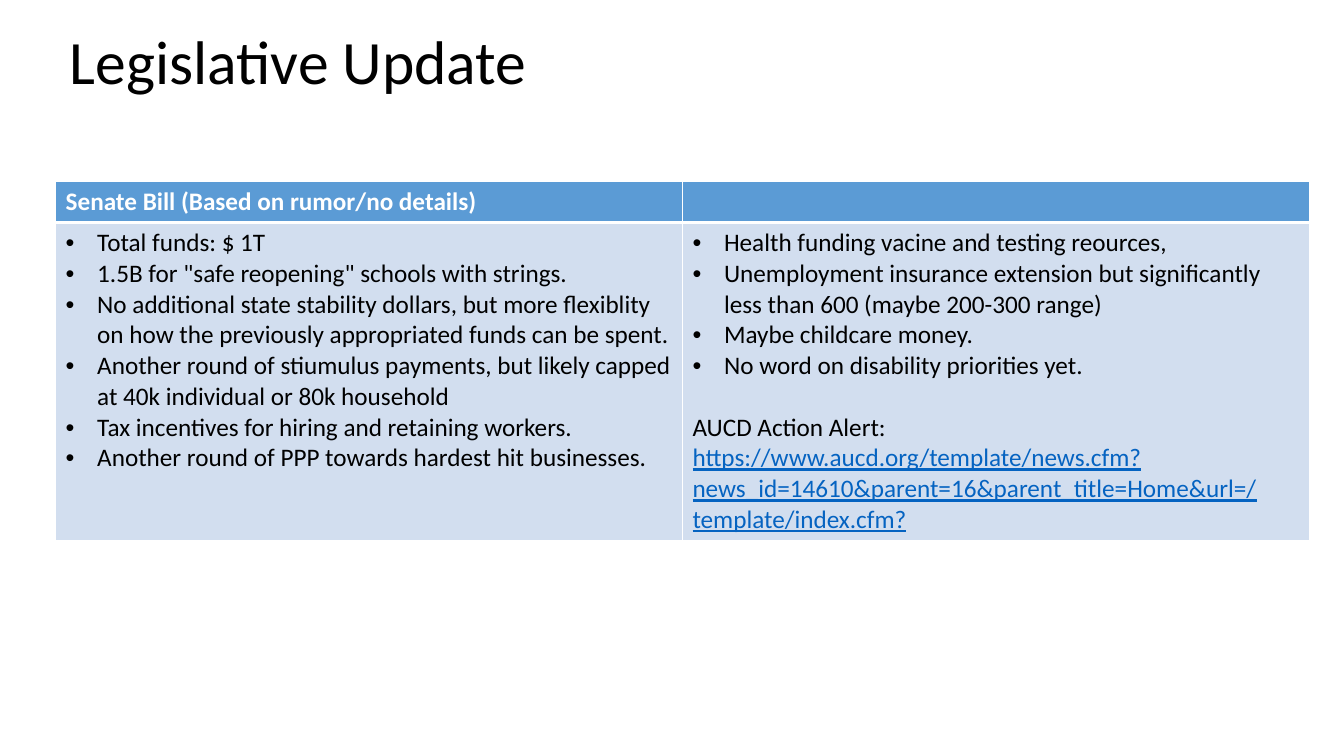
from dataclasses import dataclass

from pptx import Presentation, util as u
from pptx.dml.color import RGBColor
from pptx.enum import text
from pptx.oxml import parse_xml
from pptx.oxml.ns import nsdecls

PX = 9525
FONT = "Calibri"
BLACK = RGBColor(0, 0, 0)
WHITE = RGBColor(0xFF, 0xFF, 0xFF)
BLUE = RGBColor(0x5B, 0x9B, 0xD5)
PALE = RGBColor(0xD2, 0xDE, 0xEF)
LINK = RGBColor(0x05, 0x63, 0xC1)

COL_W = 597
HEAD_H, BODY_H = 39, 298
INDENT = 30


@dataclass
class Column:
    head: str
    points: list[str]
    alert: str = ""
    url: str = ""


COLUMNS = [
    Column("Senate Bill (Based on rumor/no details)", [
        "Total funds: $ 1T",
        '1.5B for "safe reopening" schools with strings.',
        "No additional state stability dollars, but more flexiblity on how "
        "the previously appropriated funds can be spent.",
        "Another round of stiumulus payments, but likely "
        "capped at 40k individual or 80k household",
        "Tax incentives for hiring and retaining workers.",
        "Another round of PPP towards hardest hit businesses.",
    ]),
    Column("", [
        "Health funding vacine and testing reources,",
        "Unemployment insurance extension but significantly less than 600 "
        "(maybe 200-300 range)",
        "Maybe childcare money.",
        "No word on disability priorities yet.",
    ], "AUCD Action Alert:",
        "https://www.aucd.org/template/news.cfm?news_id=14610&parent=16"
        "&parent_title=Home&url=/template/index.cfm?"),
]


def px(n: int) -> u.Emu:
    return u.Emu(n * PX)


def add_run(para, words: str, size: int = 18, color: RGBColor = BLACK,
            bold: bool = False, under: bool = False) -> None:
    run = para.add_run()
    run.text = words
    font = run.font
    font.name, font.size, font.bold = FONT, u.Pt(size), bold
    font.color.rgb = color
    if under:
        font.underline = True


def add_bullet(para) -> None:
    props = para._p.get_or_add_pPr()
    props.set("marL", str(px(INDENT)))
    props.set("indent", str(px(-INDENT)))
    props.append(parse_xml(f'<a:buFont {nsdecls("a")} typeface="Arial"/>'))
    props.append(parse_xml(f'<a:buChar {nsdecls("a")} char="•"/>'))


def style_cell(cell, fill: RGBColor, top: int, base: int) -> None:
    """Fill the cell and give it white borders, with top and base in points."""
    cell.fill.solid()
    cell.fill.fore_color.rgb = fill
    edges = {"L": 1, "R": 1, "T": top, "B": base}
    for i, (side, width) in enumerate(edges.items()):
        cell._tc.get_or_add_tcPr().insert(i, parse_xml(
            f'<a:ln{side} {nsdecls("a")} w="{u.Pt(width)}"><a:solidFill>'
            f'<a:srgbClr val="{WHITE}"/></a:solidFill></a:ln{side}>'))


def fill_body(frame, col: Column) -> None:
    for i, point in enumerate(col.points):
        para = frame.add_paragraph() if i else frame.paragraphs[0]
        add_bullet(para)
        add_run(para, point)
    if col.alert:
        para = frame.add_paragraph()
        para.space_before = u.Pt(22)
        add_run(para, col.alert)
        para.add_line_break()
        add_run(para, col.url, color=LINK, under=True)


def add_title(slide, words: str) -> None:
    title = slide.shapes.title
    title.left, title.top, title.width, title.height = map(px, (57, 19, 1104, 84))
    frame = title.text_frame
    frame.vertical_anchor = text.MSO_ANCHOR.MIDDLE
    para = frame.paragraphs[0]
    para.alignment = text.PP_ALIGN.LEFT
    para.line_spacing = 0.9
    para.space_after = u.Pt(6)
    add_run(para, words, 44)


def add_bills(slide) -> None:
    count = len(COLUMNS)
    table = slide.shapes.add_table(
        2, count, px(53), px(173), px(COL_W * count), px(HEAD_H + BODY_H)).table
    for row, height in zip(table.rows, (HEAD_H, BODY_H)):
        row.height = px(height)
    for i, col in enumerate(COLUMNS):
        table.columns[i].width = px(COL_W)
        head, body = table.cell(0, i), table.cell(1, i)
        style_cell(head, BLUE, 1, 3)
        style_cell(body, PALE, 3, 1)
        if col.head:
            add_run(head.text_frame.paragraphs[0], col.head, color=WHITE, bold=True)
        fill_body(body.text_frame, col)


def main() -> None:
    deck = Presentation()
    deck.slide_width, deck.slide_height = px(1280), px(720)
    slide = deck.slides.add_slide(deck.slide_layouts[5])
    add_title(slide, "Legislative Update")
    add_bills(slide)
    deck.save("out.pptx")


if __name__ == "__main__":
    main()
